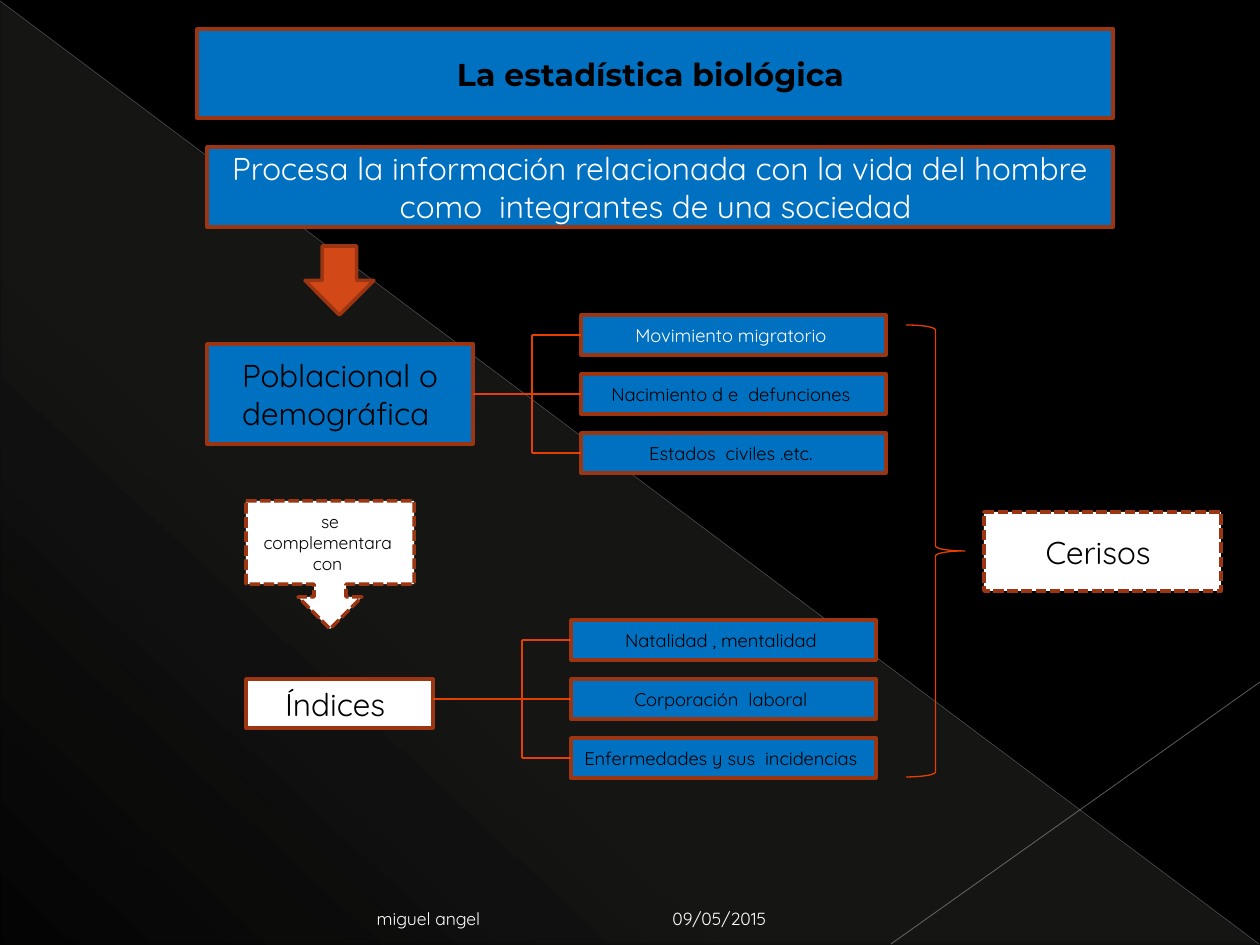
from pptx import Presentation, util as u
from pptx.dml.color import RGBColor
from pptx.enum import dml, shapes, text
from pptx.oxml import parse_xml
from pptx.oxml.ns import nsdecls, qn
from lxml import etree

PX = u.Inches(1) / 126
BLACK = RGBColor(0x00, 0x00, 0x00)
WHITE = RGBColor(0xFF, 0xFF, 0xFF)
BLUE = RGBColor(0x00, 0x70, 0xC0)
ORANGE = RGBColor(0xD3, 0x48, 0x17)
RUST = RGBColor(0x9C, 0x35, 0x11)
RED = RGBColor(0xE6, 0x3F, 0x04)
GREY = RGBColor(0xC3, 0xC2, 0xC2)
KIND = shapes.MSO_SHAPE
DASH = dml.MSO_LINE.SQUARE_DOT

deck = Presentation()
deck.slide_width, deck.slide_height = u.Inches(10), u.Inches(7.5)
page = deck.slides.add_slide(deck.slide_layouts[6])
page.background.fill.solid()
page.background.fill.fore_color.rgb = BLACK


def add_box(kind, place, fill, words="", size=18, color=BLACK, font="Quicksand", bold=False, dash=None):
    box = page.shapes.add_shape(kind, *[round(n * PX) for n in place])
    box.shadow.inherit = False
    box.fill.solid()
    box.fill.fore_color.rgb = fill
    box.line.color.rgb = RUST
    box.line.width = u.Pt(2)
    if dash:
        box.line.dash_style = dash
    if words:
        box.text_frame.vertical_anchor = text.MSO_ANCHOR.MIDDLE
        para = box.text_frame.paragraphs[0]
        para.alignment = text.PP_ALIGN.CENTER
        span = para.add_run()
        span.text = words
        for name, value in {"size": u.Pt(size), "name": font, "bold": bold}.items():
            setattr(span.font, name, value)
        span.font.color.rgb = color
    return box


def add_line(x1, y1, x2, y2, color=RED, width=0.75, alpha=None):
    line = page.shapes.add_connector(shapes.MSO_CONNECTOR.STRAIGHT, *[round(n * PX) for n in (x1, y1, x2, y2)])
    line.line.color.rgb = color
    line.line.width = u.Pt(width)
    if alpha:
        tint = line._element.spPr.find(".//" + qn("a:srgbClr"))
        etree.SubElement(tint, qn("a:alpha")).set("val", str(alpha * 1000))
    etree.SubElement(line._element.spPr, qn("a:effectLst"))
    return line


corner = add_box(KIND.RIGHT_TRIANGLE, (1, 2, 1258, 942), BLACK)
corner.line.fill.background()
stops = "".join(
    f'<a:gs pos="{pos * 1000}"><a:srgbClr val="E9E5DC"><a:alpha val="{alpha * 1000}"/></a:srgbClr></a:gs>'
    for pos, alpha in ((0, 10), (70, 8), (100, 1))
)
gradient = parse_xml(
    f'<a:gradFill {nsdecls("a")}><a:gsLst>{stops}</a:gsLst><a:lin ang="7980000" scaled="0"/></a:gradFill>'
)
solid = corner._element.spPr.find(qn("a:solidFill"))
solid.getparent().replace(solid, gradient)
add_line(0, 1, 1259, 944, GREY, 0.39, 35)
add_line(1260, 682, 891, 944, GREY, 0.47, 45)

add_box(KIND.RECTANGLE, (197, 29, 916, 89), BLUE, "La estadística biológica ", font="Montserrat", bold=True)
add_box(
    KIND.RECTANGLE, (207, 147, 906, 80), BLUE,
    "Procesa la información relacionada con la vida del hombre como  integrantes de una sociedad ", color=WHITE,
)
add_box(KIND.DOWN_ARROW, (305, 246, 69, 69), ORANGE)
population = add_box(KIND.RECTANGLE, (207, 344, 266, 100), BLUE, "Poblacional o demográfica ")
add_box(KIND.DOWN_ARROW_CALLOUT, (246, 501, 168, 128), WHITE, "se complementara  con ", 10, dash=DASH)
add_box(KIND.RECTANGLE, (246, 679, 187, 49), WHITE, "Índices ")

groups = [
    (581, 315, WHITE, ("Movimiento migratorio ", "Nacimiento d e  defunciones ", "Estados  civiles .etc. ")),
    (571, 620, BLACK, ("Natalidad , mentalidad ", "Corporación  laboral ", "Enfermedades y sus  incidencias ")),
]
for left, top, first_color, labels in groups:
    branch = left - 49
    middles = [top + 20 + 59 * row for row in range(3)]
    add_line(branch, middles[0], branch, middles[-1])
    for row, label in enumerate(labels):
        color = BLACK if row else first_color
        item = add_box(KIND.RECTANGLE, (left, top + 59 * row, 305, 40), BLUE, label, 10.5, color)
        add_line(branch, middles[row], left, middles[row]).end_connect(item, 1)
add_line(473, 394, 532, 394).begin_connect(population, 3)
add_line(433, 699, 522, 699)

brace = add_box(KIND.RIGHT_BRACE, (906, 325, 59, 452), BLACK)
brace.fill.background()
brace.line.color.rgb = RED
brace.line.width = u.Pt(0.75)
add_box(KIND.RECTANGLE, (984, 512, 237, 79), WHITE, "Cerisos ", dash=DASH)

footers = [
    ("09/05/2015", (660, 893, 294, 42), text.PP_ALIGN.LEFT, 12),
    ("miguel angel", (63, 893, 587, 42), text.PP_ALIGN.RIGHT, 170),
]
for words, place, alignment, margin in footers:
    frame = page.shapes.add_textbox(*[round(n * PX) for n in place]).text_frame
    settings = {"word_wrap": True, "vertical_anchor": text.MSO_ANCHOR.BOTTOM, "margin_right": round(margin * PX)}
    for name, value in settings.items():
        setattr(frame, name, value)
    para = frame.paragraphs[0]
    para.alignment = alignment
    span = para.add_run()
    span.text = words
    for name, value in {"size": u.Pt(10), "name": "Quicksand"}.items():
        setattr(span.font, name, value)
    span.font.color.rgb = WHITE

deck.save("out.pptx")
